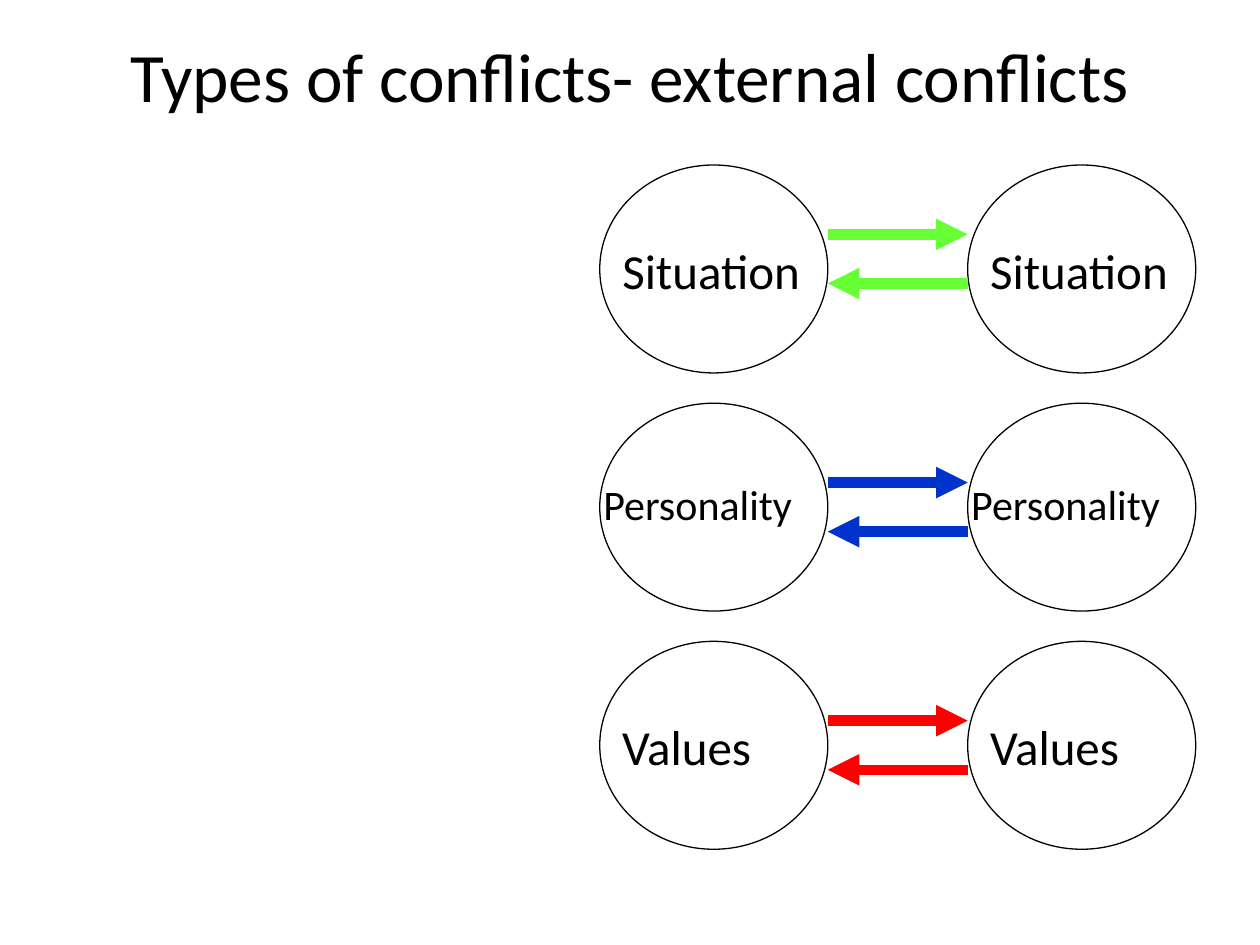
from dataclasses import dataclass

from lxml.etree import SubElement
from pptx import Presentation
from pptx.dml.color import RGBColor
from pptx.enum.shapes import MSO_CONNECTOR, MSO_SHAPE
from pptx.enum.text import MSO_ANCHOR, MSO_AUTO_SIZE, PP_ALIGN
from pptx.oxml.ns import qn
from pptx.util import Inches, Pt

BLACK = "000000"
PARTY_LEFTS = (4.76, 7.68)
PARTY_WIDTH, PARTY_HEIGHT = 1.81, 1.65
FIRST_TOP, ROW_PITCH = 1.31, 1.89
LABEL_DROP = 0.55
ARROW_GAP = 0.39


@dataclass(frozen=True)
class Conflict:
    label: str
    color: str
    arrow_drop: float
    label_inset: float
    label_widths: tuple[float, float]
    label_height: float
    label_size: float


CONFLICTS = (
    Conflict("Situation", "66FF33", 0.55, 0.08, (1.89, 1.89), 0.57, 28),
    Conflict("Personality", "0033CC", 0.63, -0.07, (2.13, 2.13), 0.51, 24),
    Conflict("Values", "FF0000", 0.63, 0.08, (2.13, 1.77), 0.57, 28),
)


def rgb(color: str) -> RGBColor:
    return RGBColor.from_string(color)


def add_text(slide, text: str, box: tuple, size: float,
             align=PP_ALIGN.LEFT, **frame_format) -> None:
    frame = slide.shapes.add_textbox(*map(Inches, box)).text_frame
    for name, value in {"word_wrap": True, **frame_format}.items():
        setattr(frame, name, value)
    paragraph = frame.paragraphs[0]
    paragraph.alignment = align
    run = paragraph.add_run()
    run.text = text
    for name, value in {"name": "Calibri", "size": Pt(size)}.items():
        setattr(run.font, name, value)
    run.font.color.rgb = rgb(BLACK)


def add_party(slide, left: float, top: float) -> None:
    box = map(Inches, (left, top, PARTY_WIDTH, PARTY_HEIGHT))
    party = slide.shapes.add_shape(MSO_SHAPE.OVAL, *box)
    party.shadow.inherit = False
    party.fill.background()
    party.line.color.rgb = rgb(BLACK)
    party.line.width = Pt(0.75)


def add_arrow(slide, start: float, end: float, y: float, color: str) -> None:
    ends = map(Inches, (start, y, end, y))
    arrow = slide.shapes.add_connector(MSO_CONNECTOR.STRAIGHT, *ends)
    arrow.line.color.rgb = rgb(color)
    arrow.line.width = Pt(6)
    SubElement(arrow.line._get_or_add_ln(), qn("a:tailEnd"), type="triangle")
    SubElement(arrow._element.spPr, qn("a:effectLst"))


def add_conflict(slide, conflict: Conflict, top: float) -> None:
    """Draw two labelled parties with opposing arrows between them."""
    for left, width in zip(PARTY_LEFTS, conflict.label_widths):
        add_party(slide, left, top)
        box = (left + conflict.label_inset, top + LABEL_DROP,
               width, conflict.label_height)
        add_text(slide, conflict.label, box, conflict.label_size,
                 auto_size=MSO_AUTO_SIZE.SHAPE_TO_FIT_TEXT)
    near, far = PARTY_LEFTS[0] + PARTY_WIDTH, PARTY_LEFTS[1]
    arrow_y = top + conflict.arrow_drop
    add_arrow(slide, near, far, arrow_y, conflict.color)
    add_arrow(slide, far, near, arrow_y + ARROW_GAP, conflict.color)


def main() -> None:
    deck = Presentation()
    deck.slide_width, deck.slide_height = Inches(10), Inches(7.5)
    slide = deck.slides.add_slide(deck.slide_layouts[6])
    add_text(slide, "Types of conflicts- external conflicts",
             (0.5, 0.3, 9, 1.25), 39.6, PP_ALIGN.CENTER,
             vertical_anchor=MSO_ANCHOR.MIDDLE, margin_bottom=Inches(0.72))
    for row, conflict in enumerate(CONFLICTS):
        add_conflict(slide, conflict, FIRST_TOP + row * ROW_PITCH)
    deck.save("out.pptx")


if __name__ == "__main__":
    main()
